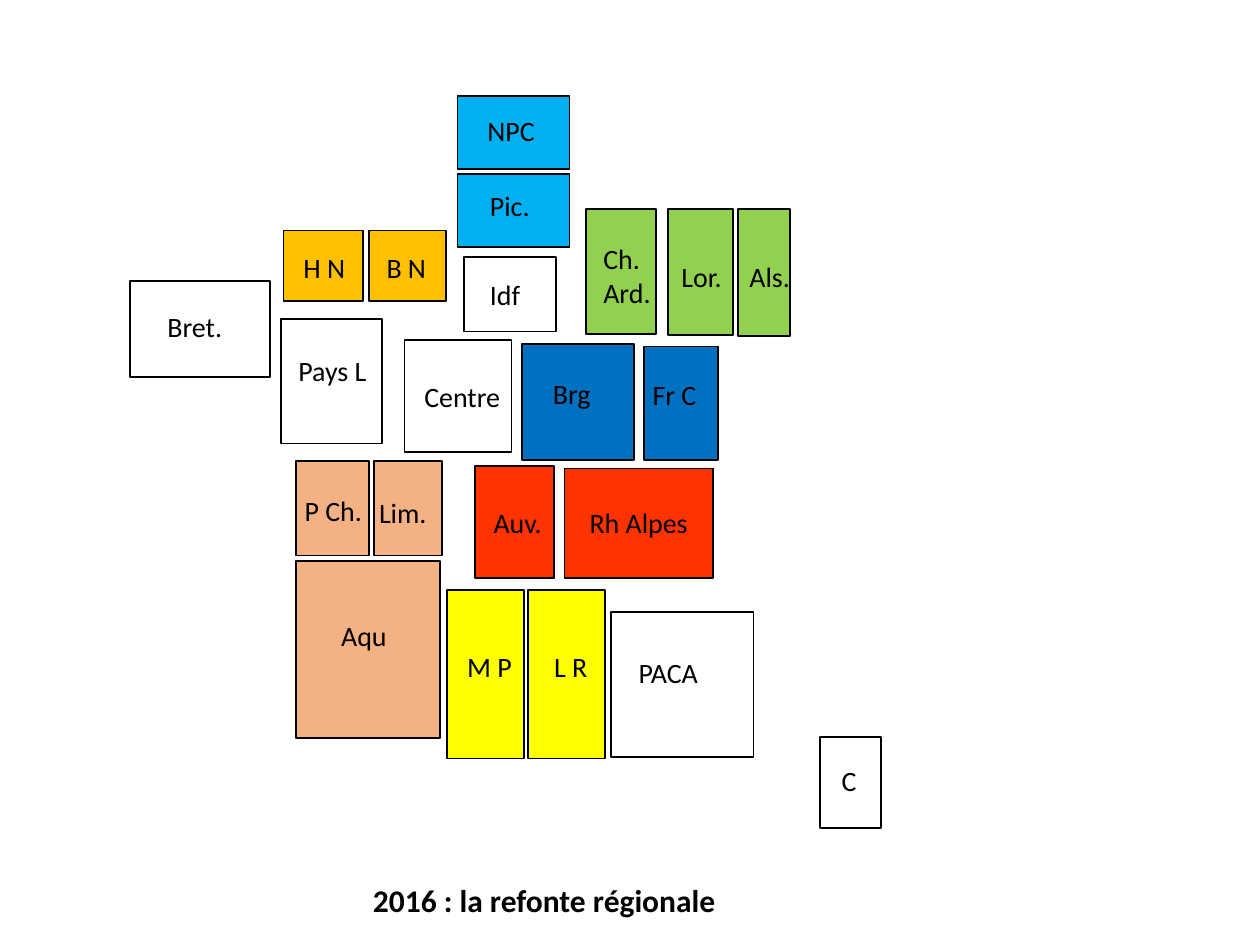
import pptx
import pptx.dml.color
import pptx.enum.shapes
import pptx.enum.text
import pptx.util

Pt = pptx.util.Pt

REGIONS = {
    "00B0F0": [
        ("NPC", (261.4, 54.7, 64.1, 41.8), (271.4, 61.2, 41.8)),
        ("Pic.", (261.4, 99.4, 64.1, 41.8), (272.9, 104.4, 37.4)),
    ],
    "FFC000": [
        ("H N", (162, 131.8, 45.4, 40.3), (166.3, 139.7, 38.9)),
        ("B N", (211, 131.8, 43.9, 40.3), (213.8, 139.7, 37.4)),
    ],
    "F4B183": [
        ("Aqu", (169.2, 320.4, 82.1, 101.5), (187.9, 349.9, 41)),
        ("Lim.", (213.8, 263.5, 38.9, 54), (209.5, 279.4, 41.8)),
        ("P Ch.", (169.2, 263.5, 41.8, 54), (167, 278.6, 47.5)),
    ],
    "FFFF00": [
        ("M P", (255.6, 337, 43.9, 96.5), (259.9, 367.9, 40.3)),
        ("L R", (301.7, 337, 43.9, 96.5), (309.6, 367.9, 33.8)),
    ],
    "FF3300": [
        ("Auv.", (271.4, 266.4, 45.4, 64.1), (275, 285.1, 42.5)),
        ("Rh Alpes", (322.6, 267.8, 85, 62.6), (329.8, 285.1, 71.3)),
    ],
    "0070C0": [
        ("Brg", (298.1, 196.6, 64.1, 66.2), (308.9, 211.7, 36.7)),
        ("Fr C", (367.9, 198, 42.5, 64.8), (365.8, 212.4, 39.6)),
    ],
    "92D050": [
        ("Ch.\nArd.", (334.8, 119.5, 40.3, 71.3), (337.7, 134.6, 41.8)),
        ("Lor.", (381.6, 119.5, 37.4, 72), (382.3, 144.7, 38.2)),
        ("Als.", (421.9, 119.5, 29.5, 72.7), (421.2, 144.7, 38.2)),
    ],
    None: [
        ("Bret.", (74.2, 160.6, 79.9, 54.7), (88.6, 173.5, 46.1)),
        ("Pays L", (160.6, 182.2, 57.6, 71.3), (163.4, 198.7, 54)),
        ("Idf", (265, 146.9, 52.6, 42.5), (272.9, 154.8, 31.7)),
        ("Centre", (231.1, 194.4, 61.2, 64.1), (235.4, 213.1, 58.3)),
        ("PACA", (349.2, 349.9, 81.4, 82.8), (357.8, 370.8, 49)),
        ("C", (468.7, 421.2, 34.6, 51.8), (473.8, 432.7, 23)),
    ],
}


def color(value):
    return pptx.dml.color.RGBColor.from_string(value)


def apply(target, values):
    for name, value in values.items():
        setattr(target, name, value)


class RegionMap:
    ink = "000000"
    label_font = {"name": "Calibri", "size": Pt(16), "bold": False}
    title_font = {"name": "Calibri", "size": Pt(18), "bold": True}
    frame_format = {
        "word_wrap": False,
        "auto_size": pptx.enum.text.MSO_AUTO_SIZE.SHAPE_TO_FIT_TEXT,
        "vertical_anchor": pptx.enum.text.MSO_ANCHOR.TOP,
    }

    def __init__(self, slide):
        self.slide = slide

    def set_text(self, shape, text, font):
        frame = shape.text_frame
        frame.text = text
        apply(frame, self.frame_format)
        for paragraph in frame.paragraphs:
            paragraph.alignment = pptx.enum.text.PP_ALIGN.LEFT
            for run in paragraph.runs:
                apply(run.font, font)
                run.font.color.rgb = color(self.ink)

    def title(self, text, box):
        shape = self.slide.shapes.title
        apply(shape, dict(zip(("left", "top", "width", "height"), map(Pt, box))))
        self.set_text(shape, text, self.title_font)

    def region(self, box, fill):
        rectangle = pptx.enum.shapes.MSO_SHAPE.RECTANGLE
        shape = self.slide.shapes.add_shape(rectangle, *map(Pt, box))
        shape.shadow.inherit = False
        if fill:
            shape.fill.solid()
            shape.fill.fore_color.rgb = color(fill)
        else:
            shape.fill.background()
        shape.line.color.rgb = color(self.ink)
        shape.line.width = Pt(1)

    def label(self, text, place):
        height = 46.1 if "\n" in text else 26.6
        shape = self.slide.shapes.add_textbox(*map(Pt, (*place, height)))
        self.set_text(shape, text, self.label_font)


def main():
    presentation = pptx.Presentation()
    apply(presentation, {"slide_width": Pt(720), "slide_height": Pt(540)})
    layout = presentation.slide_layouts.get_by_name("Title Only")
    region_map = RegionMap(presentation.slides.add_slide(layout))
    region_map.title("2016 : la refonte régionale", (205.9, 499.7, 211.7, 28.8))
    for fill, regions in REGIONS.items():
        for _, box, _ in regions:
            region_map.region(box, fill)
    for regions in REGIONS.values():
        for text, _, place in regions:
            region_map.label(text, place)
    presentation.save("out.pptx")


if __name__ == "__main__":
    main()
